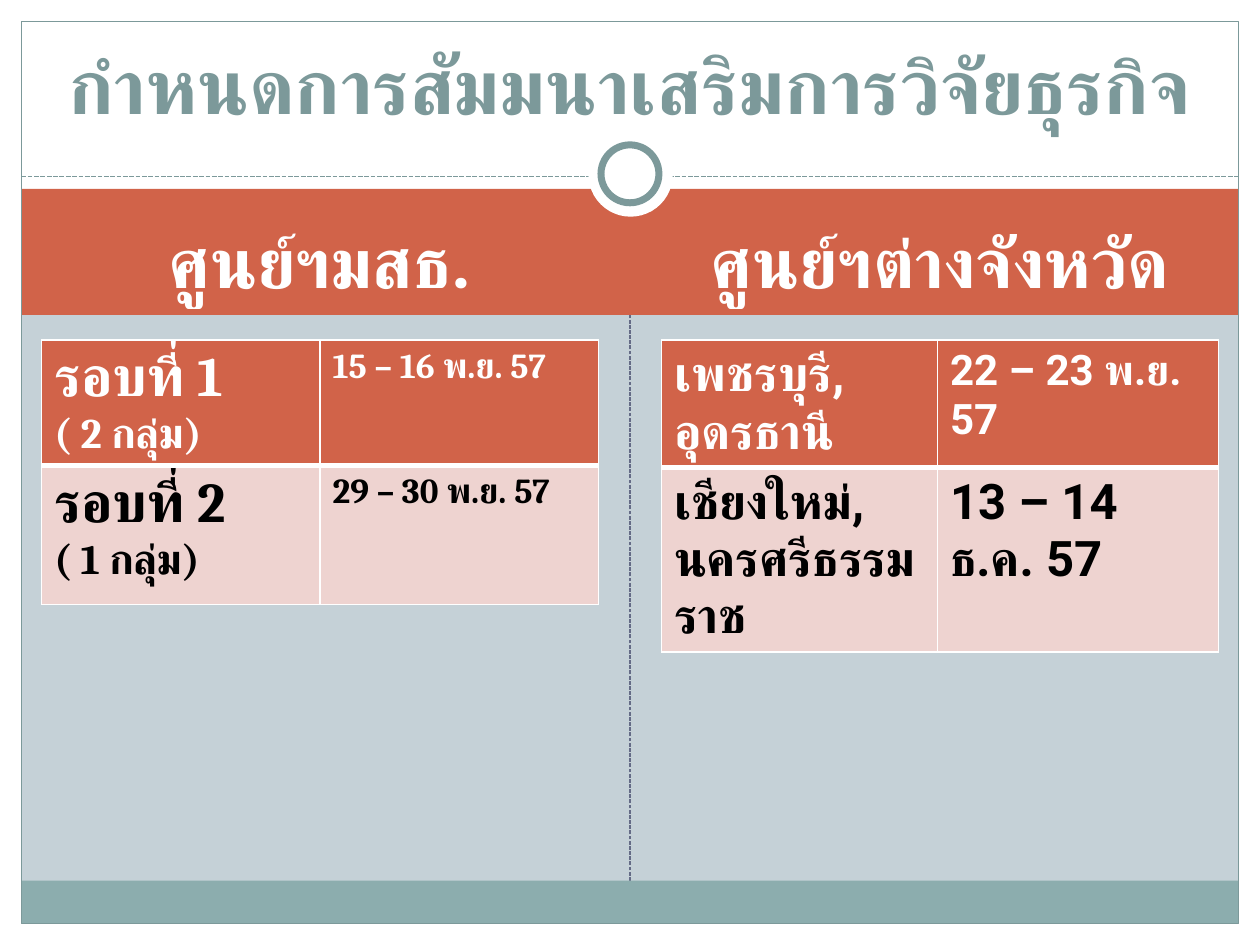
from lxml import etree
from pptx import Presentation
from pptx.dml.color import RGBColor
from pptx.enum.dml import MSO_LINE
from pptx.enum.shapes import MSO_CONNECTOR, MSO_SHAPE
from pptx.enum.text import MSO_ANCHOR, MSO_AUTO_SIZE, PP_ALIGN
from pptx.oxml.ns import qn
from pptx.util import Inches, Pt

RECT, OVAL = MSO_SHAPE.RECTANGLE, MSO_SHAPE.OVAL
LINE, DASH = MSO_CONNECTOR.STRAIGHT, MSO_LINE.SQUARE_DOT
MID, LOW = MSO_ANCHOR.MIDDLE, MSO_ANCHOR.BOTTOM
CENTER, FIXED = PP_ALIGN.CENTER, MSO_AUTO_SIZE.NONE

THEME = {
    "back": "C5D1D7", "white": "FFFFFF", "black": "000000", "head": "D16349",
    "pale": "EED3D0", "foot": "8CADAE", "rule": "7C999A", "split": "646B86",
    "serif": "Cambria", "sans": "Roboto",
    "title": 44, "label": 40, "big": 32, "mid": 28, "note": 24, "small": 20,
}

TITLE = "กำหนดการสัมมนาเสริมการวิจัยธุรกิจ"
GROUPS = [
    {"label": "ศูนย์ฯมสธ.", "face": "sans", "font": "serif", "left": 0.33,
     "cols": [2.21, 2.21], "rows": [0.98, 1.1],
     "cells": [
         [[[("รอบที่ 1", "big")], [("( 2 กลุ่ม)", "note")]],
          [[("15 – 16 พ.ย. 57", "small")]]],
         [[[("รอบที่ 2", "big"), (" ", "note")], [("( 1 กลุ่ม)", "note")]],
          [[("29 – 30 พ.ย. 57", "small")]]],
     ]},
    {"label": "ศูนย์ฯต่างจังหวัด", "face": "serif", "font": "sans", "left": 5.25,
     "cols": [2.19, 2.23], "rows": [0.89, 0.94],
     "cells": [
         [[[("เพชรบุรี, อุดรธานี", "mid")]], [[("22 – 23 พ.ย. 57", "note")]]],
         [[[("เชียงใหม่, นครศรีธรรมราช", "mid")]], [[("13 – 14 ธ.ค. 57", "mid")]]],
     ]},
]

WIDE, HIGH, EDGE = 10, 7.5, 0.17
INNER = WIDE - 2 * EDGE
PANELS = [
    (RECT, 0, 0, WIDE, 1.58, "white", None, 0),
    (RECT, 0, HIGH - EDGE, WIDE, EDGE, "white", None, 0),
    (RECT, 0, 0, EDGE, HIGH, "white", None, 0),
    (RECT, WIDE - EDGE, 0, EDGE, HIGH, "white", None, 0),
    (RECT, EDGE, 1.5, INNER, 1, "head", None, 0),
    (RECT, EDGE, 6.99, INNER, 0.34, "foot", None, 0),
]
RINGS = [
    (RECT, EDGE, EDGE, INNER, HIGH - 2 * EDGE, None, "rule", 0.75),
    (OVAL, 4.67, 1.05, 0.67, 0.67, "white", None, 0),
    (OVAL, 4.77, 1.15, 0.46, 0.46, "white", "rule", 4),
]


def color(name):
    return RGBColor.from_string(THEME[name])


def paint(fill, name):
    if name:
        fill.solid()
        fill.fore_color.rgb = color(name)
    else:
        fill.background()


def panel(slide, kind, x, y, w, h, fill, edge, width):
    shape = slide.shapes.add_shape(kind, Inches(x), Inches(y), Inches(w), Inches(h))
    shape.shadow.inherit = False
    paint(shape.fill, fill)
    paint(shape.line.fill, edge)
    if edge:
        shape.line.width = Pt(width)


def rule(slide, x1, y1, x2, y2, name, width):
    line = slide.shapes.add_connector(LINE, Inches(x1), Inches(y1), Inches(x2), Inches(y2))
    line.line.color.rgb = color(name)
    line.line.width = Pt(width)
    line.line.dash_style = DASH
    etree.SubElement(line.element.spPr, qn("a:effectLst"))


def write(para, text, size, font, ink):
    run = para.add_run()
    run.text = text
    run.font.size = Pt(THEME[size])
    run.font.bold = True
    run.font.name = THEME[font]
    run.font.color.rgb = color(ink)
    etree.SubElement(run.font._element, qn("a:cs"), typeface=THEME[font])


def heading(slide, hold, box, text, size, font, ink, anchor, gap=0):
    hold.left, hold.top, hold.width, hold.height = map(Inches, box)
    slide.shapes.element.append(hold.element)
    frame = hold.text_frame
    frame.word_wrap = True
    frame.auto_size = FIXED
    frame.vertical_anchor = anchor
    para = frame.paragraphs[0]
    para.alignment = CENTER
    para.space_before = Pt(gap)
    write(para, text, size, font, ink)


def border(cell, low):
    props = cell._tc.get_or_add_tcPr()
    for side in "LRTB":
        width = low if side == "B" else 1
        line = etree.SubElement(props, qn("a:ln" + side), w=str(Pt(width)))
        solid = etree.SubElement(line, qn("a:solidFill"))
        etree.SubElement(solid, qn("a:srgbClr"), val=THEME["white"])


def grid(slide, group):
    cols, rows = group["cols"], group["rows"]
    table = slide.shapes.add_table(
        len(rows), len(cols), Inches(group["left"]), Inches(2.7),
        Inches(sum(cols)), Inches(sum(rows))).table
    table.horz_banding = False
    for col, width in zip(table.columns, cols):
        col.width = Inches(width)
    for r, (row, height) in enumerate(zip(table.rows, rows)):
        row.height = Inches(height)
        fill, ink, low = ("pale", "black", 1) if r else ("head", "white", 3)
        for cell, paras in zip(row.cells, group["cells"][r]):
            border(cell, low)
            paint(cell.fill, fill)
            frame = cell.text_frame
            for i, runs in enumerate(paras):
                para = frame.add_paragraph() if i else frame.paragraphs[0]
                for text, size in runs:
                    write(para, text, size, group["font"], ink)


def main():
    deck = Presentation()
    deck.slide_width, deck.slide_height = Inches(WIDE), Inches(HIGH)
    slide = deck.slides.add_slide(deck.slide_layouts[4])
    paint(slide.background.fill, "back")
    title, left, body, right, spare = slide.placeholders
    for hold in (body, spare):
        slide.shapes.element.remove(hold.element)

    rule(slide, 5, 6.99, 5, 2.41, "split", 0.75)
    for item in PANELS:
        panel(slide, *item)
    rule(slide, EDGE, 1.4, WIDE - EDGE, 1.4, "rule", 0.9)
    for item in RINGS:
        panel(slide, *item)
    for hold, group in zip((left, right), GROUPS):
        heading(slide, hold, (group["left"], 1.67, 4.42, 0.8), group["label"],
                "label", group["face"], "white", MID, THEME["label"] * 0.2)
    for group in GROUPS:
        grid(slide, group)
    heading(slide, title, (0.33, 0.25, 9.33, 0.83), TITLE, "title", "serif", "rule", LOW)
    deck.save("out.pptx")


if __name__ == "__main__":
    main()
